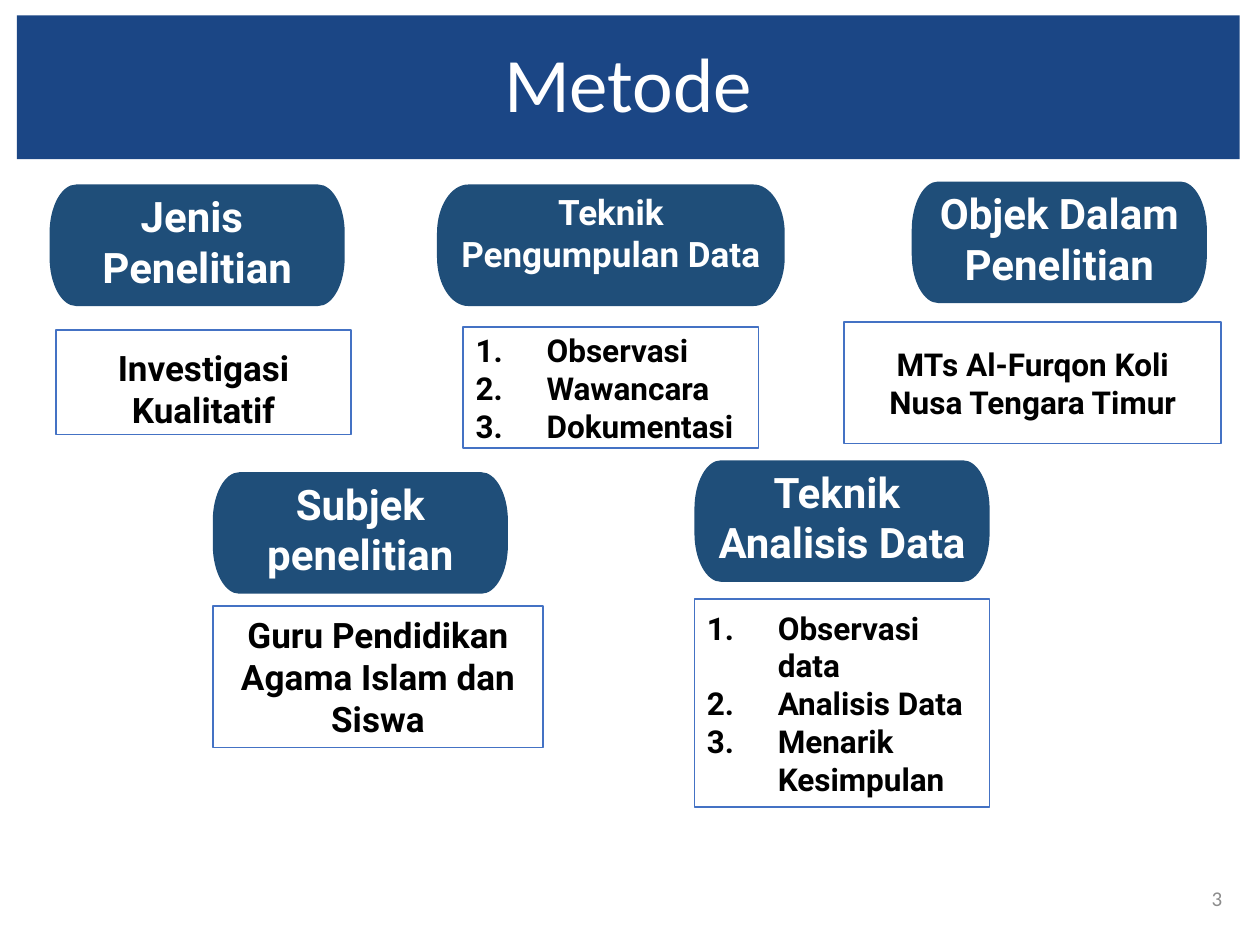
import pptx
import pptx.util
import pptx.dml.color
import pptx.enum.shapes
import pptx.enum.text
import lxml.etree
from pptx.util import Cm

ALIGN = pptx.enum.text.PP_ALIGN
ANCHOR = pptx.enum.text.MSO_ANCHOR
RECTANGLE = pptx.enum.shapes.MSO_SHAPE.RECTANGLE
NAVY, BADGE, BORDER, WHITE, BLACK, GRAY = "1B4685", "1F4E79", "4472C4", "FFFFFF", "000000", "8C8C8C"


def color(value):
    return pptx.dml.color.RGBColor.from_string(value)


def write(shape, lines, size=18, font="Roboto", fill=BLACK, bold=True, align=ALIGN.CENTER,
          anchor=ANCHOR.MIDDLE, numbered=False, spacing=1.0):
    frame = shape.text_frame
    frame.word_wrap = True
    frame.vertical_anchor = anchor
    for index, line in enumerate(lines):
        paragraph = frame.paragraphs[0] if index == 0 else frame.add_paragraph()
        paragraph.alignment = align
        paragraph.line_spacing = spacing
        if numbered:
            properties = paragraph._p.get_or_add_pPr()
            properties.set("marL", str(Cm(1.43)))
            properties.set("indent", str(-Cm(1.43)))
            bullet = lxml.etree.SubElement(properties, pptx.oxml.ns.qn("a:buAutoNum"))
            bullet.set("type", "arabicPeriod")
        run = paragraph.add_run()
        run.text = line
        run.font.name = font
        run.font.size = pptx.util.Pt(size)
        run.font.bold = bold
        run.font.color.rgb = color(fill)


presentation = pptx.Presentation()
presentation.slide_width = Cm(25.4)
presentation.slide_height = Cm(19.05)
slide = presentation.slides.add_slide(presentation.slide_layouts[6])

title = slide.shapes.add_shape(RECTANGLE, Cm(0.34), Cm(0.31), Cm(24.65), Cm(2.9))
title.shadow.inherit = False
title.fill.solid()
title.fill.fore_color.rgb = color(NAVY)
title.line.fill.background()
write(title, ["Metode"], size=44, font="Calibri", fill=WHITE, bold=False, spacing=0.9)

badges = [
    (1.0, 3.72, 5.95, 24, ["Jenis ", "Penelitian"]),
    (8.81, 3.72, 7.01, 20, ["Teknik", "Pengumpulan Data"]),
    (18.38, 3.66, 5.95, 24, ["Objek Dalam Penelitian"]),
    (4.29, 9.52, 5.95, 24, ["Subjek penelitian"]),
    (14.0, 9.28, 5.95, 24, ["Teknik ", "Analisis Data"]),
]
badge_height = 2.45
for left, top, width, size, lines in badges:
    radius_x, radius_y = width * 0.09, badge_height * 0.4
    right, bottom = left + width, top + badge_height
    points = [(Cm(x), Cm(y)) for x, y in [
        (left + radius_x, top), (right - radius_x, top),
        (right, top + radius_y), (right, bottom - radius_y),
        (right - radius_x, bottom), (left + radius_x, bottom),
        (left, bottom - radius_y), (left, top + radius_y),
    ]]
    builder = slide.shapes.build_freeform(*points[0])
    builder.add_line_segments(points[1:] + points[:1], close=True)
    badge = builder.convert_to_shape()
    segments = list(badge._element.iter(pptx.oxml.ns.qn("a:lnTo")))
    for index in range(1, 8, 2):
        start_x, start_y = [int(segments[index - 1][0].get(axis)) for axis in "xy"]
        end_x, end_y = [int(segments[index][0].get(axis)) for axis in "xy"]
        corner_x, corner_y = (end_x, start_y) if index in (1, 5) else (start_x, end_y)
        segments[index].tag = pptx.oxml.ns.qn("a:cubicBezTo")
        for position, (x, y) in enumerate([(start_x, start_y), (end_x, end_y)]):
            control = lxml.etree.Element(pptx.oxml.ns.qn("a:pt"))
            control.set("x", str(round(x + 0.55 * (corner_x - x))))
            control.set("y", str(round(y + 0.55 * (corner_y - y))))
            segments[index].insert(position, control)
    badge.shadow.inherit = False
    badge.fill.solid()
    badge.fill.fore_color.rgb = color(BADGE)
    badge.line.fill.background()
    write(badge, lines, size=size, fill=WHITE, anchor=ANCHOR.TOP)

boxes = [
    (1.13, 6.65, 5.95, 2.11, [], {}),
    (9.34, 6.59, 5.95, 2.45, ["Observasi", "Wawancara", "Dokumentasi"],
     {"numbered": True, "align": ALIGN.JUSTIFY}),
    (17.02, 6.49, 7.6, 2.45, ["MTs Al-Furqon Koli Nusa Tengara Timur"], {}),
    (4.29, 12.22, 6.66, 2.85, ["Guru Pendidikan Agama Islam dan Siswa"], {"size": 20}),
    (14.0, 12.08, 5.95, 4.19, ["Observasi data", "Analisis Data", "Menarik Kesimpulan"],
     {"numbered": True, "align": ALIGN.LEFT}),
]
for left, top, width, height, lines, options in boxes:
    box = slide.shapes.add_shape(RECTANGLE, Cm(left), Cm(top), Cm(width), Cm(height))
    box.shadow.inherit = False
    box.fill.solid()
    box.fill.fore_color.rgb = color(WHITE)
    box.line.color.rgb = color(BORDER)
    box.line.width = pptx.util.Pt(1)
    write(box, lines, **options)

research_type = slide.shapes.add_textbox(Cm(1.13), Cm(6.59), Cm(5.95), Cm(2.49))
write(research_type, ["Investigasi Kualitatif"], size=20)

page_number = slide.shapes.add_textbox(Cm(23.8), Cm(17.6), Cm(1.09), Cm(1.02))
write(page_number, ["3"], size=12, font="Calibri", fill=GRAY, bold=False, align=ALIGN.RIGHT)

presentation.save("out.pptx")
